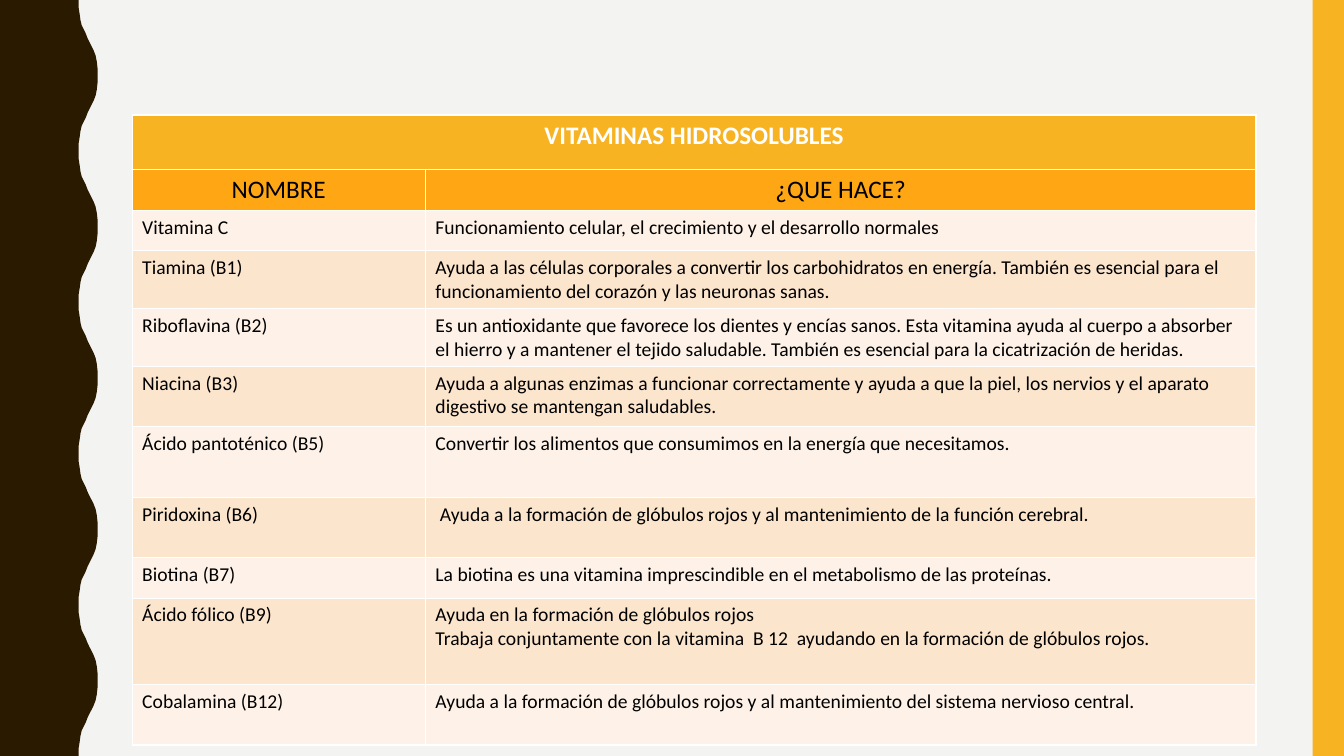
from dataclasses import dataclass

from pptx import Presentation
from pptx.dml.color import RGBColor
from pptx.enum.shapes import MSO_SHAPE
from pptx.enum.text import PP_ALIGN
from pptx.util import Cm, Pt

RECTANGLE = MSO_SHAPE.RECTANGLE
CENTER, LEFT = PP_ALIGN.CENTER, PP_ALIGN.LEFT

TITLE = "VITAMINAS HIDROSOLUBLES"
HEADINGS = ("NOMBRE", "¿QUE HACE?")
# Name, function, row height in cm
VITAMINS = [
    ("Vitamina C", "Funcionamiento celular, el crecimiento y el desarrollo normales", 1.02),
    ("Tiamina (B1)",
     "Ayuda a las células corporales a convertir los carbohidratos en energía. "
     "También es esencial para el funcionamiento del corazón y las neuronas sanas.", 1.45),
    ("Riboflavina (B2)",
     "Es un antioxidante que favorece los dientes y encías sanos. Esta vitamina ayuda "
     "al cuerpo a absorber el hierro y a mantener el tejido saludable. "
     "También es esencial para la cicatrización de heridas.", 1.45),
    ("Niacina (B3)",
     "Ayuda a algunas enzimas a funcionar correctamente y ayuda a que la piel, "
     "los nervios y el aparato digestivo se mantengan saludables.", 1.52),
    ("Ácido pantoténico (B5)",
     "Convertir los alimentos que consumimos en la energía que necesitamos.", 1.78),
    ("Piridoxina (B6)",
     " Ayuda a la formación de glóbulos rojos y al mantenimiento de la función cerebral.", 1.52),
    ("Biotina (B7)",
     "La biotina es una vitamina imprescindible en el metabolismo de las proteínas.", 1.02),
    ("Ácido fólico (B9)",
     "Ayuda en la formación de glóbulos rojos\n"
     "Trabaja conjuntamente con la vitamina  B 12  ayudando en la formación de glóbulos rojos.",
     2.18),
    ("Cobalamina (B12)",
     "Ayuda a la formación de glóbulos rojos y al mantenimiento del sistema nervioso central.",
     1.52),
]
TITLE_HEIGHT, HEADING_HEIGHT = 1.37, 1.02
COLUMN_WIDTHS = (7.39, 20.93)
TABLE_LEFT, TABLE_TOP = 3.33, 2.9
SLIDE_WIDTH, SLIDE_HEIGHT = 33.87, 19.05
STRIPE_WIDTH = 0.79

# Wavy edge from trough to crest: (x, y) in cm
HALF_WAVE = [
    (1.98, 0), (1.98, 0.18), (2.01, 0.36), (2.03, 0.51), (2.06, 0.64),
    (2.11, 0.74), (2.16, 0.84), (2.21, 0.97), (2.26, 1.07), (2.31, 1.17),
    (2.36, 1.27), (2.41, 1.4), (2.44, 1.55), (2.46, 1.73), (2.46, 1.91),
]
WAVE_COUNT = 5


@dataclass(frozen=True)
class Theme:
    font: str = "Calibri"
    heading_size: int = 18
    body_size: int = 14
    background: str = "F3F3F2"
    wave: str = "2A1A00"
    accent: str = "F8B323"
    heading_fill: str = "FFA615"
    row_fills: tuple = ("FEF2E8", "FCE5CD")
    light_text: str = "FFFFFF"
    dark_text: str = "000000"


THEME = Theme()


def paint(shape, color):
    shape.shadow.inherit = False
    shape.fill.solid()
    shape.fill.fore_color.rgb = RGBColor.from_string(color)
    shape.line.fill.background()


def add_wavy_band(slide):
    period = SLIDE_HEIGHT / WAVE_COUNT
    wave = HALF_WAVE + [(x, period - y) for x, y in HALF_WAVE[-2::-1]]
    edge = [(Cm(x), Cm(y + period * i)) for i in range(WAVE_COUNT) for x, y in wave]
    builder = slide.shapes.build_freeform(0, 0)
    builder.add_line_segments(edge + [(0, Cm(SLIDE_HEIGHT))], close=True)
    paint(builder.convert_to_shape(), THEME.wave)


def add_side_stripe(slide):
    stripe = slide.shapes.add_shape(
        RECTANGLE, Cm(SLIDE_WIDTH - STRIPE_WIDTH), 0, Cm(STRIPE_WIDTH), Cm(SLIDE_HEIGHT))
    paint(stripe, THEME.accent)


def fill_cell(cell, text, fill, size, color=THEME.dark_text, alignment=LEFT, bold=False):
    cell.fill.solid()
    cell.fill.fore_color.rgb = RGBColor.from_string(fill)
    cell.text_frame.text = text
    for paragraph in cell.text_frame.paragraphs:
        paragraph.alignment = alignment
        for run in paragraph.runs:
            run.font.name = THEME.font
            run.font.size = Pt(size)
            run.font.bold = bold
            run.font.color.rgb = RGBColor.from_string(color)


def add_vitamin_table(slide):
    heights = [TITLE_HEIGHT, HEADING_HEIGHT] + [height for _, _, height in VITAMINS]
    table = slide.shapes.add_table(
        len(heights), len(COLUMN_WIDTHS), Cm(TABLE_LEFT), Cm(TABLE_TOP),
        Cm(sum(COLUMN_WIDTHS)), Cm(sum(heights))).table
    for column, width in zip(table.columns, COLUMN_WIDTHS):
        column.width = Cm(width)
    for row, height in zip(table.rows, heights):
        row.height = Cm(height)

    table.cell(0, 0).merge(table.cell(0, 1))
    fill_cell(table.cell(0, 0), TITLE, THEME.accent, THEME.heading_size,
              THEME.light_text, CENTER, bold=True)
    for column, heading in enumerate(HEADINGS):
        fill_cell(table.cell(1, column), heading, THEME.heading_fill,
                  THEME.heading_size, alignment=CENTER)
    for index, (name, function, _) in enumerate(VITAMINS):
        for column, text in enumerate((name, function)):
            fill_cell(table.cell(index + 2, column), text,
                      THEME.row_fills[index % 2], THEME.body_size)


def main():
    presentation = Presentation()
    presentation.slide_width = Cm(SLIDE_WIDTH)
    presentation.slide_height = Cm(SLIDE_HEIGHT)
    slide = presentation.slides.add_slide(presentation.slide_layouts.get_by_name("Blank"))
    slide.background.fill.solid()
    slide.background.fill.fore_color.rgb = RGBColor.from_string(THEME.background)
    add_wavy_band(slide)
    add_side_stripe(slide)
    add_vitamin_table(slide)
    presentation.save("out.pptx")


if __name__ == "__main__":
    main()
